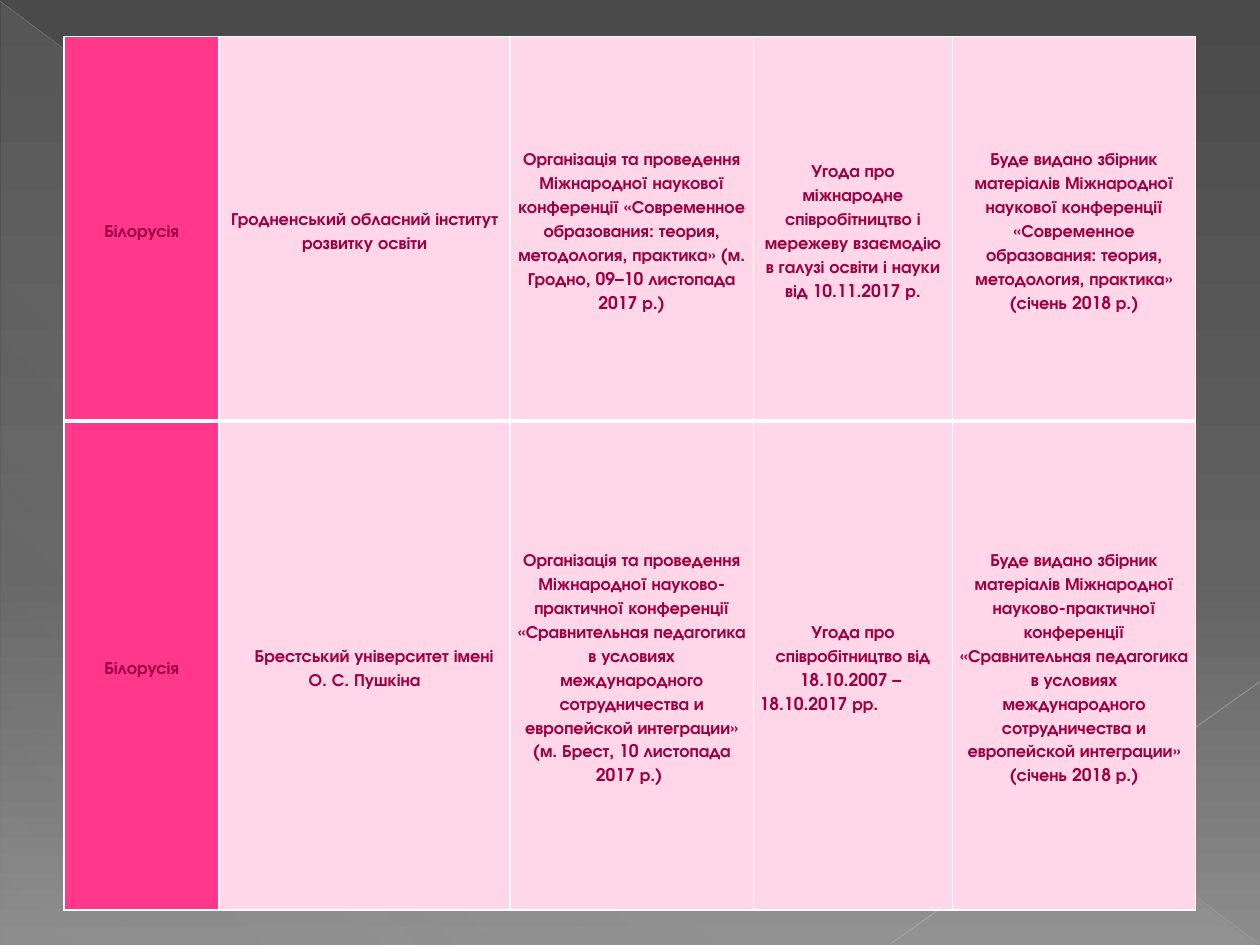
from lxml.etree import SubElement
from pptx import Presentation
from pptx.dml.color import RGBColor
from pptx.enum.shapes import MSO_CONNECTOR as Connector, MSO_SHAPE as Shape
from pptx.enum.text import MSO_ANCHOR as Anchor, PP_ALIGN as Align
from pptx.oxml import parse_xml
from pptx.oxml.ns import nsdecls, qn
from pptx.util import Pt

COLORS = {
    "text": "9C0042", "country": "FF388C", "detail": "FFD7E8", "border": "FFFFFF",
    "top": "4A4A4A", "middle": "626262", "bottom": "8C8C8C",
    "sheen": "D2D2D2", "diagonal": "BFBFBF", "corner": "C6C6C6",
}
FONT = {"name": "TeX Gyre Adventor", "size": Pt(10), "bold": True}
CELL = {"vertical_anchor": Anchor.MIDDLE, "margin_left": Pt(3.6), "margin_right": Pt(3.6),
        "margin_top": 0, "margin_bottom": 0}
PARAGRAPH = {"alignment": Align.CENTER, "line_spacing": 1.5}
COLUMN_WIDTHS = [88.5, 166.3, 139, 113.8, 139]
ROW_HEIGHTS = [219.6, 279.4]
AGREEMENTS = [
    [
        ["Білорусія"],
        ["Гродненський обласний інститут розвитку освіти"],
        ["Організація та проведення Міжнародної наукової конференції «Современное "
         "образования: теория, методология, практика» (м. Гродно, 09–10 листопада 2017 р.)"],
        ["Угода про міжнародне співробітництво і мережеву взаємодію в галузі освіти "
         "і науки від 10.11.2017 р."],
        ["Буде видано збірник",
         "матеріалів Міжнародної наукової конференції «Современное образования: "
         "теория, методология, практика» (січень 2018 р.)"],
    ],
    [
        ["Білорусія"],
        ["Брестський університет імені О. С. Пушкіна"],
        ["Організація та проведення Міжнародної науково-практичної конференції "
         "«Сравнительная педагогика в условиях международного сотрудничества и "
         "европейской интеграции» (м. Брест, 10 листопада 2017 р.) "],
        ["Угода про співробітництво від 18.10.2007 – ", "18.10.2017 рр."],
        ["Буде видано збірник матеріалів Міжнародної науково-практичної конференції "
         "«Сравнительная педагогика в условиях международного сотрудничества и "
         "европейской интеграции» (січень 2018 р.)"],
    ],
]


def apply_format(target, values):
    """Set every attribute named in a dict of format values."""
    for name, value in values.items():
        setattr(target, name, value)


def rgb(name):
    """Return the palette colour as an RGBColor."""
    return RGBColor.from_string(COLORS[name])


def gradient(stops, angle):
    """Build a linear gradient from (position, colour, opacity) stops in percent."""
    marks = "".join(
        f'<a:gs pos="{position * 1000}"><a:srgbClr val="{COLORS[color]}">'
        f'<a:alpha val="{opacity * 1000}"/></a:srgbClr></a:gs>'
        for position, color, opacity in stops)
    return parse_xml(f'<a:gradFill {nsdecls("a")} rotWithShape="1"><a:gsLst>{marks}</a:gsLst>'
                     f'<a:lin ang="{angle * 60000}" scaled="0"/></a:gradFill>')


def paint_background(slide):
    """Shade the slide from dark at the top to light at the bottom."""
    fill = slide.background.fill
    fill.solid()
    properties = slide.background._cSld.bg.bgPr
    shades = [(0, "top", 100), (60, "middle", 100), (100, "bottom", 100)]
    properties.replace(properties.find(qn("a:solidFill")), gradient(shades, 90))


def add_sheen(slide):
    """Lay a faint translucent triangle over the lower left half."""
    sheen = slide.shapes.add_shape(Shape.RIGHT_TRIANGLE, Pt(0.7), Pt(1.4), Pt(718.6), Pt(538.6))
    sheen.shadow.inherit = False
    sheen.line.fill.background()
    sheen.fill.solid()
    properties = sheen._element.spPr
    glow = [(0, "sheen", 10), (70, "sheen", 8), (100, "sheen", 1)]
    properties.replace(properties.find(qn("a:solidFill")), gradient(glow, 133))


def add_ray(slide, start, end, color, width, opacity):
    """Draw a thin translucent line between two points."""
    ray = slide.shapes.add_connector(Connector.STRAIGHT, *map(Pt, start + end))
    ray.line.width = Pt(width)
    ray.line.color.rgb = rgb(color)
    properties = ray._element.spPr
    tint = properties.find(".//" + qn("a:srgbClr"))
    SubElement(tint, qn("a:alpha"), val=str(opacity * 1000))
    SubElement(properties, qn("a:effectLst"))


def set_borders(cell, bottom_width):
    """Give a cell white borders, one point wide except at the bottom."""
    widths = {"lnL": 1, "lnR": 1, "lnT": 1, "lnB": bottom_width}
    for place, (side, width) in enumerate(widths.items()):
        border = parse_xml(f'<a:{side} {nsdecls("a")} w="{Pt(width)}"><a:solidFill>'
                           f'<a:srgbClr val="{COLORS["border"]}"/></a:solidFill></a:{side}>')
        cell._tc.get_or_add_tcPr().insert(place, border)


def fill_cell(cell, lines, fill, bottom_width):
    """Write the paragraphs of a cell and format it."""
    apply_format(cell, CELL)
    cell.fill.solid()
    cell.fill.fore_color.rgb = rgb(fill)
    set_borders(cell, bottom_width)
    cell.text = "\n".join(lines)
    for paragraph in cell.text_frame.paragraphs:
        apply_format(paragraph, PARAGRAPH)
        for run in paragraph.runs:
            apply_format(run.font, FONT)
            run.font.color.rgb = rgb("text")


def add_agreements(slide):
    """Add the table of agreements and return it."""
    frame = slide.shapes.add_table(len(ROW_HEIGHTS), len(COLUMN_WIDTHS), Pt(36.7), Pt(20.9),
                                   Pt(sum(COLUMN_WIDTHS)), Pt(sum(ROW_HEIGHTS)))
    table = frame.table
    apply_format(table, {"first_row": False, "horz_banding": False})
    for column, width in zip(table.columns, COLUMN_WIDTHS):
        column.width = Pt(width)
    for row, height, agreement, bottom_width in zip(table.rows, ROW_HEIGHTS, AGREEMENTS, (3, 1)):
        row.height = Pt(height)
        for index, (cell, lines) in enumerate(zip(row.cells, agreement)):
            fill_cell(cell, lines, "detail" if index else "country", bottom_width)
    return table


def main():
    """Build the slide and save it."""
    deck = Presentation()
    apply_format(deck, {"slide_width": Pt(720), "slide_height": Pt(540)})
    slide = deck.slides.add_slide(deck.slide_layouts[6])
    paint_background(slide)
    add_sheen(slide)
    add_ray(slide, (0, 0.7), (719.3, 539.3), "diagonal", 0.39, 35)
    add_ray(slide, (720, 389.5), (509, 539.3), "corner", 0.47, 45)
    table = add_agreements(slide)
    university = table.cell(1, 1).text_frame.paragraphs[0]
    university._p.get_or_add_pPr().set("indent", str(Pt(10.8)))
    period_end = table.cell(1, 3).text_frame.paragraphs[1]
    period_end.alignment = Align.LEFT
    deck.save("out.pptx")


if __name__ == "__main__":
    main()
